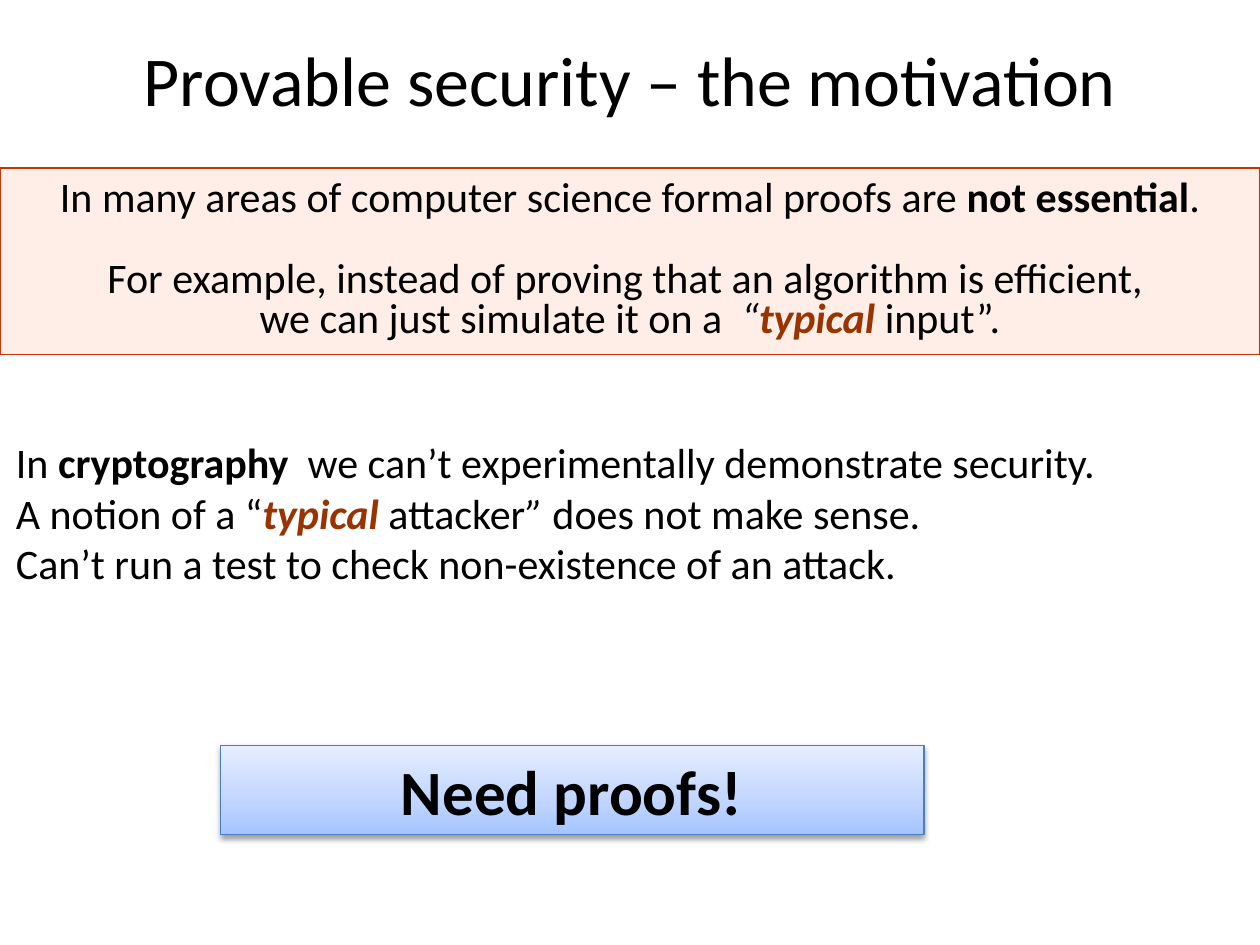
from lxml.etree import SubElement
from pptx import Presentation
from pptx.dml.color import RGBColor
from pptx.enum.shapes import MSO_SHAPE as Shape
from pptx.enum.text import MSO_ANCHOR as Anchor, MSO_AUTO_SIZE as AutoSize, PP_ALIGN as Align
from pptx.oxml.ns import qn
from pptx.util import Pt

COLORS = {
    "text": "000000", "accent": "993300",
    "panel": "FFEEE7", "panel_line": "CC3300",
    "low": "A4C4FF", "mid": "BFD4FF", "high": "E6EEFF",
    "button_line": "4B7EBC", "shadow": "000000",
}


def rgb(name):
    """Return the named colour."""
    return RGBColor.from_string(COLORS[name])


def add_run(p, text, size=24, color="text", bold=False, italic=False):
    """Append a formatted run to a paragraph."""
    r = p.add_run()
    r.text = text
    font = r.font
    font.name, font.size, font.bold, font.italic = "Calibri", Pt(size), bold, italic
    font.color.rgb = rgb(color)


def add_paragraphs(tf, paragraphs, align=Align.LEFT, spacing=None, gap=0):
    """Fill a frame with paragraphs of (text, format) runs; None breaks a line."""
    for i, runs in enumerate(paragraphs):
        p = tf.add_paragraph() if i else tf.paragraphs[0]
        p.alignment, p.line_spacing = align, spacing
        p.space_before = Pt(gap if i else 0)
        for run in runs:
            if run is None:
                p.add_line_break()
            else:
                add_run(p, run[0], **run[1])


def add_box(slide, box, line):
    """Add a thinly outlined rectangle with middle-anchored text."""
    sp = slide.shapes.add_shape(Shape.RECTANGLE, *map(Pt, box))
    sp.shadow.inherit = False
    sp.line.color.rgb = rgb(line)
    sp.line.width = Pt(0.75)
    sp.text_frame.vertical_anchor = Anchor.MIDDLE
    return sp


def add_color(parent, name):
    """Append a colour element to an XML parent."""
    return SubElement(parent, qn("a:srgbClr"), val=COLORS[name])


def set_gradient(sp, stops):
    """Fill a shape with a gradient that rises from bottom to top."""
    sp.fill.gradient()
    sp.fill.gradient_angle = 90
    gs_list = sp._element.spPr.find(qn("a:gradFill")).find(qn("a:gsLst"))
    for gs in list(gs_list):
        gs_list.remove(gs)
    for percent, name in stops:
        add_color(SubElement(gs_list, qn("a:gs"), pos=str(percent * 1000)), name)


def set_shadow(sp, blur, distance, alpha):
    """Give a shape a soft shadow straight below it."""
    effects = sp._element.spPr.find(qn("a:effectLst"))
    shadow = SubElement(effects, qn("a:outerShdw"), blurRad=str(Pt(blur)),
                        dist=str(Pt(distance)), dir="5400000", rotWithShape="0")
    SubElement(add_color(shadow, "shadow"), qn("a:alpha"), val=str(alpha * 1000))


def place_title(slide, box, text):
    """Move and format the title placeholder."""
    sp = slide.shapes.title
    sp.left, sp.top, sp.width, sp.height = map(Pt, box)
    sp.text_frame.vertical_anchor = Anchor.MIDDLE
    add_paragraphs(sp.text_frame, [[(text, {"size": 40})]], Align.CENTER)


def add_panel(slide, box, paragraphs):
    """Add the tinted panel across the slide."""
    sp = add_box(slide, box, "panel_line")
    sp.fill.solid()
    sp.fill.fore_color.rgb = rgb("panel")
    sp.text_frame.word_wrap = False
    add_paragraphs(sp.text_frame, paragraphs, Align.CENTER, spacing=0.8, gap=23)


def add_argument(slide, box, paragraphs):
    """Add the plain text about cryptography."""
    tf = slide.shapes.add_textbox(*map(Pt, box)).text_frame
    tf.word_wrap = False
    tf.auto_size = AutoSize.SHAPE_TO_FIT_TEXT
    add_paragraphs(tf, paragraphs)


def add_conclusion(slide, box, text):
    """Add the shaded conclusion box."""
    sp = add_box(slide, box, "button_line")
    set_gradient(sp, [(0, "low"), (35, "mid"), (100, "high")])
    set_shadow(sp, blur=3.1, distance=1.6, alpha=38)
    tf = sp.text_frame
    tf.word_wrap = True
    tf.auto_size = AutoSize.SHAPE_TO_FIT_TEXT
    tf.margin_left = Pt(14.4)
    add_paragraphs(tf, [[(text, {"size": 36, "bold": True})]], Align.CENTER)
    pPr = tf.paragraphs[0]._p.get_or_add_pPr()
    pPr.set("marL", str(Pt(40)))
    pPr.set("indent", str(-Pt(40)))


def main():
    """Build and save the slide."""
    prs = Presentation()
    prs.slide_width, prs.slide_height = Pt(720), Pt(540)
    slide = prs.slides.add_slide(prs.slide_layouts[5])
    bold, italic = {"bold": True}, {"italic": True}
    accent = {"color": "accent", "bold": True, "italic": True}
    place_title(slide, (36, 0, 648, 90), "Provable security – the motivation")
    add_panel(slide, (0, 96, 720, 106.5), [
        [("In many areas of computer science formal proofs are ", {}),
         ("not essential", bold), (".", {})],
        [("For example, instead of proving that an algorithm is efficient, ", {}), None,
         ("we can just simulate it on a  ", {}), ("“", italic),
         ("typical ", accent), ("input”.", {})],
    ])
    add_argument(slide, (2, 246, 642, 94.5), [
        [("In ", {}), ("cryptography", bold),
         ("  we can’t experimentally demonstrate security.", {})],
        [("A notion of a “", {}), ("typical ", accent), ("attacker", {}),
         ("”", italic), (" does not make sense.", {})],
        [("Can’t run a test to check non-existence of an attack.", {})],
    ])
    add_conclusion(slide, (126, 426, 402, 51), "Need proofs! ")
    prs.save("out.pptx")


if __name__ == "__main__":
    main()
